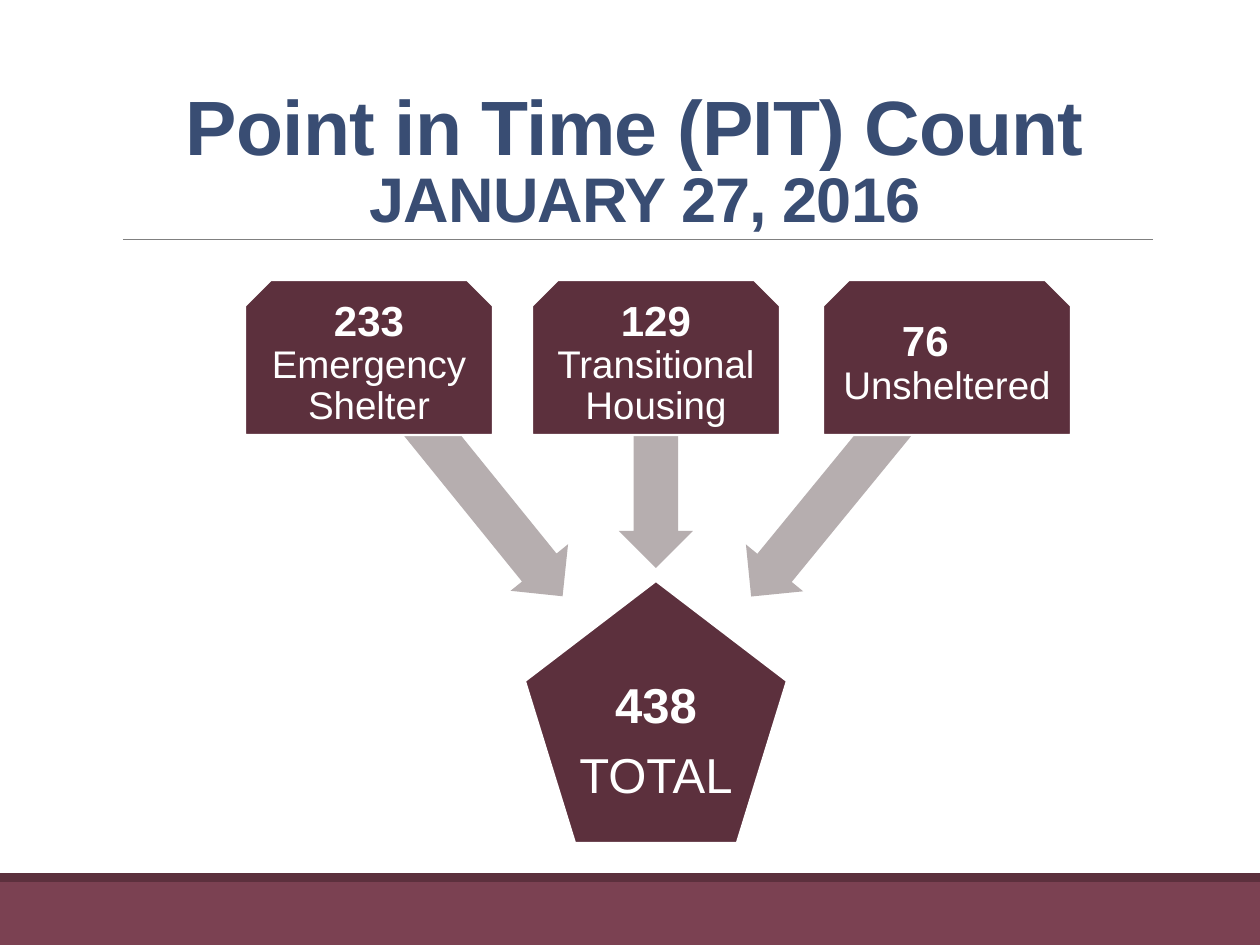
from pptx import Presentation
from pptx.dml.color import RGBColor
from pptx.enum.shapes import MSO_CONNECTOR, MSO_SHAPE
from pptx.enum.text import MSO_ANCHOR, PP_ALIGN
from pptx.util import Emu, Pt

WIDTH, HEIGHT = 1260, 945
WINE, DARK_WINE, GREY, NAVY, WHITE = "7B4152", "5C303D", "B6AEAF", "394D73", "FFFFFF"

TITLE = [("Point in Time (PIT) Count ", 44), ("JANUARY 27, 2016", 36)]
BANDS = [(882, 63, WINE), (873, 9, DARK_WINE)]
RULE = (123, 239, 1153, 239)

BOX_TOP, BOX_WIDTH, BOX_HEIGHT = 280, 248, 155
ARROW_HEIGHT = 74
SOURCES = [
    {"left": 245, "arrow": (466, 477, 307, 231),
     "text": [{"runs": [("233 ", 24, True), ("Emergency Shelter", 22, False)]}]},
    {"left": 532, "arrow": (656, 463, 210, 270),
     "text": [{"runs": [("129 ", 24, True), ("Transitional Housing", 22, False)]}]},
    {"left": 823, "arrow": (849, 477, 309, 309.3),
     "text": [{"runs": [("76", 24, True)], "align": PP_ALIGN.LEFT, "indent": 60},
              {"runs": [("Unsheltered", 22, False)]}]},
]
TOTAL = [{"runs": [("438", 28, True)], "after": 10},
         {"runs": [("TOTAL", 28, False)], "after": 10}]
TOTAL_PLACE = (525, 581, 262, 262)


def px(value):
    return Emu(round(value * 914400 / 126))


def color(value):
    return RGBColor.from_string(value)


def set_all(target, values):
    for name, value in values.items():
        setattr(target, name, value)


def add_shape(slide, kind, place, fill, outline=None):
    shape = slide.shapes.add_shape(kind, *map(px, place))
    shape.shadow.inherit = False
    shape.fill.solid()
    shape.fill.fore_color.rgb = color(fill)
    if outline:
        shape.line.color.rgb = color(outline)
        shape.line.width = Pt(1.25)
    else:
        shape.line.fill.background()
    return shape


def write(shape, paragraphs, font_color, spacing, anchor, inset=None, tracking=None):
    frame = shape.text_frame
    set_all(frame, {"word_wrap": True, "vertical_anchor": anchor})
    if inset is not None:
        sides = ("margin_left", "margin_top", "margin_right", "margin_bottom")
        set_all(frame, dict.fromkeys(sides, px(inset)))
    for index, content in enumerate(paragraphs):
        paragraph = frame.add_paragraph() if index else frame.paragraphs[0]
        set_all(paragraph, {
            "alignment": content.get("align", PP_ALIGN.CENTER),
            "line_spacing": spacing,
            "space_before": Pt(0),
            "space_after": Pt(content.get("after", 0)),
        })
        if "indent" in content:
            paragraph._p.get_or_add_pPr().set("marL", str(px(content["indent"])))
        for text, size, bold in content["runs"]:
            run = paragraph.add_run()
            run.text = text
            set_all(run.font, {"name": "Arial", "size": Pt(size), "bold": bold})
            run.font.color.rgb = color(font_color)
            if tracking:
                run._r.get_or_add_rPr().set("spc", str(tracking))


def add_rule(slide):
    rule = slide.shapes.add_connector(MSO_CONNECTOR.STRAIGHT, *map(px, RULE))
    rule.line.color.rgb = color("808080")
    rule.line.width = Pt(0.5)
    properties = rule._element.spPr
    properties.append(properties.makeelement(
        "{http://schemas.openxmlformats.org/drawingml/2006/main}effectLst", {}))


def add_source(slide, source):
    center_x, center_y, length, rotation = source["arrow"]
    place = (center_x - length / 2, center_y - ARROW_HEIGHT / 2, length, ARROW_HEIGHT)
    arrow = add_shape(slide, MSO_SHAPE.LEFT_ARROW, place, GREY)
    arrow.rotation = rotation
    arrow.adjustments[0] = 0.6
    arrow.adjustments[1] = 0.5
    box = add_shape(slide, MSO_SHAPE.SNIP_2_SAME_RECTANGLE,
                    (source["left"], BOX_TOP, BOX_WIDTH, BOX_HEIGHT), DARK_WINE, WHITE)
    write(box, source["text"], WHITE, 0.9, MSO_ANCHOR.MIDDLE, 6)


def main():
    presentation = Presentation()
    set_all(presentation, {"slide_width": px(WIDTH), "slide_height": px(HEIGHT)})
    slide = presentation.slides.add_slide(presentation.slide_layouts[6])
    for top, height, fill in BANDS:
        add_shape(slide, MSO_SHAPE.RECTANGLE, (0, top, WIDTH, height), fill)
    add_rule(slide)
    total = add_shape(slide, MSO_SHAPE.REGULAR_PENTAGON, TOTAL_PLACE, DARK_WINE, WHITE)
    write(total, TOTAL, WHITE, 0.9, MSO_ANCHOR.MIDDLE, 3)
    for source in SOURCES:
        add_source(slide, source)
    title = slide.shapes.add_textbox(*map(px, (121, 42, 1040, 200)))
    lines = [{"runs": [(text, size, True)], "indent": 8} for text, size in TITLE]
    write(title, lines, NAVY, 0.85, MSO_ANCHOR.BOTTOM, tracking=-50)
    presentation.save("out.pptx")


if __name__ == "__main__":
    main()
